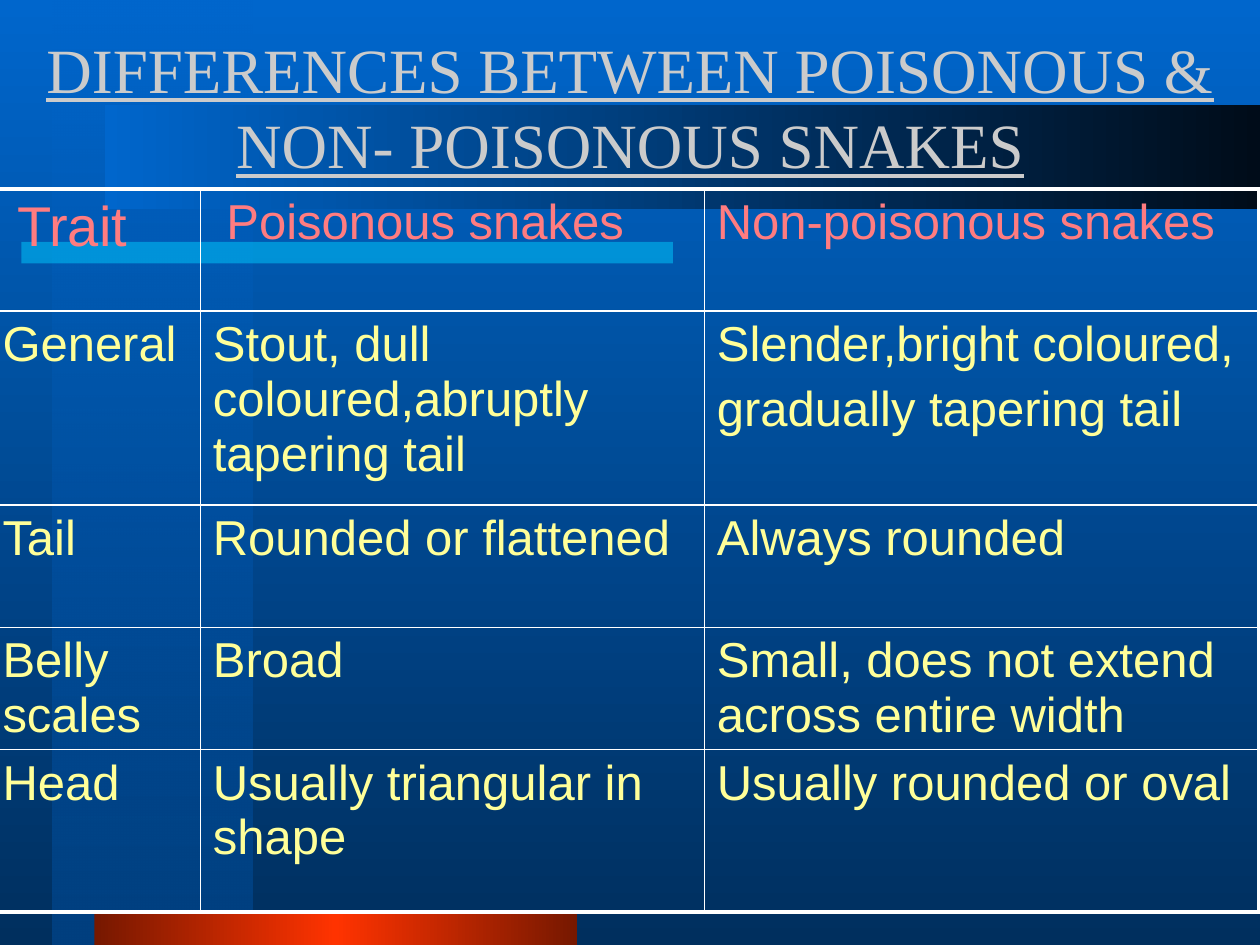
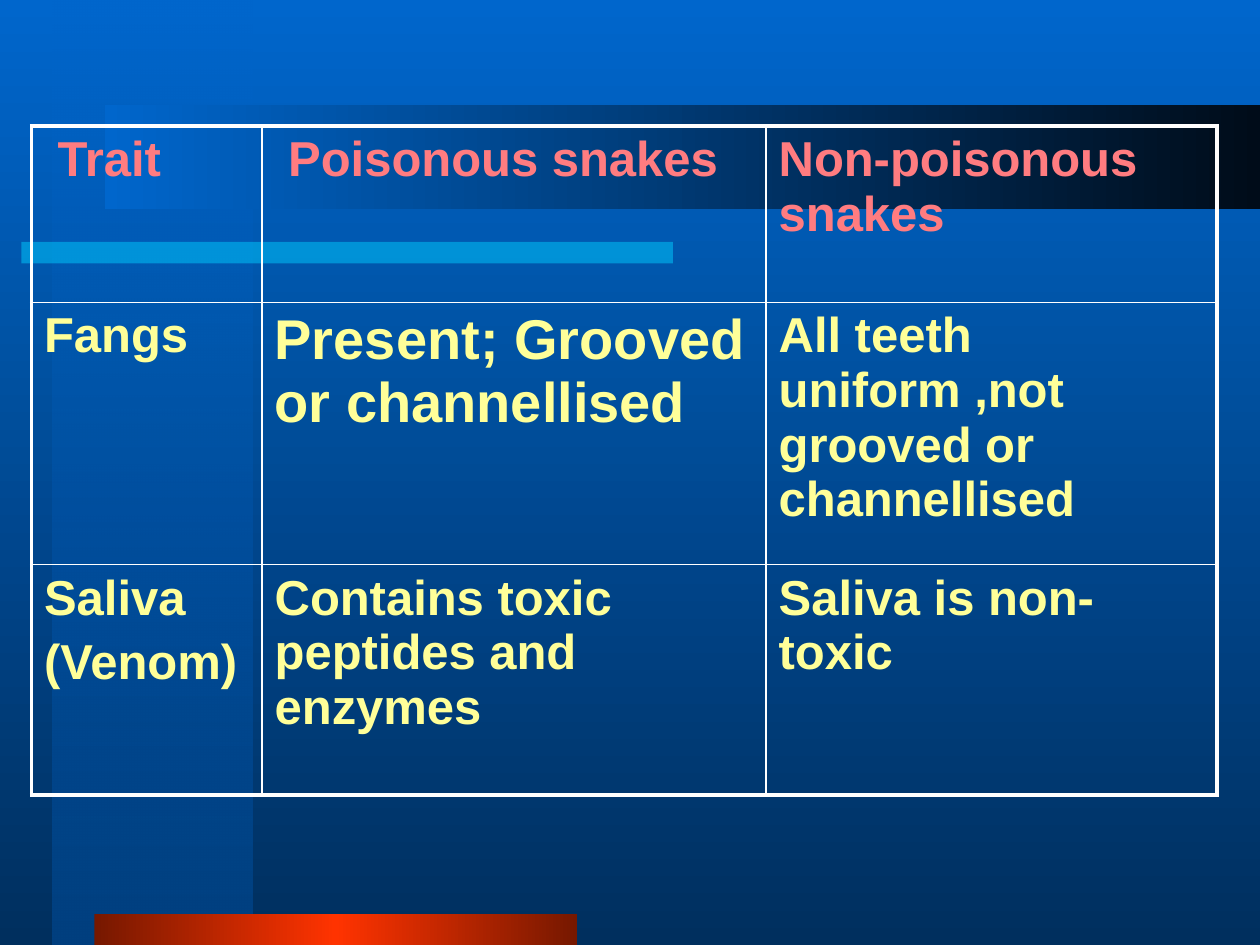
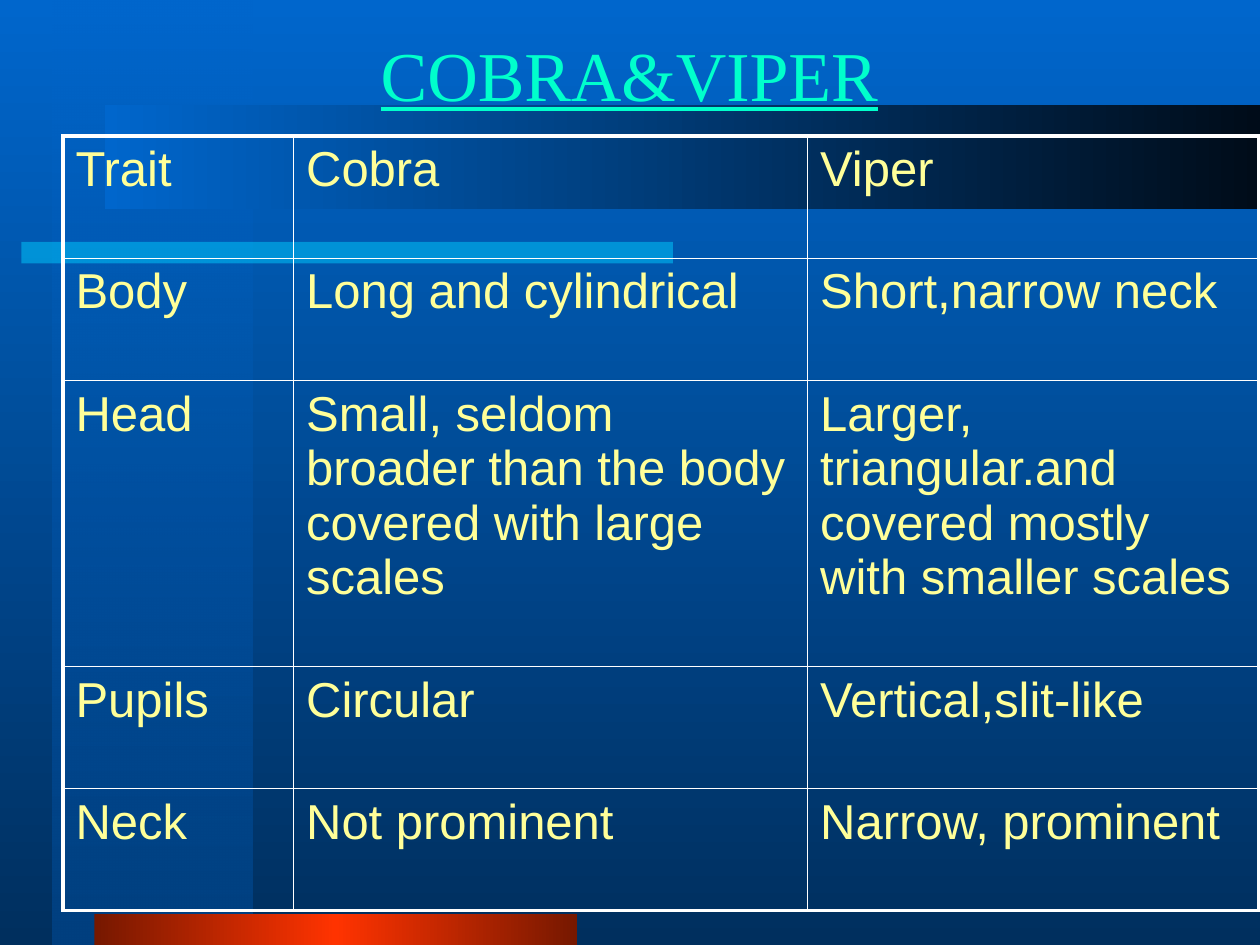
from lxml.etree import SubElement
from pptx import Presentation
from pptx.dml.color import RGBColor
from pptx.enum.shapes import MSO_SHAPE
from pptx.enum.text import MSO_ANCHOR, MSO_AUTO_SIZE, PP_ALIGN
from pptx.oxml.ns import qn
from pptx.util import Inches, Pt

COLORS = {
    "blue": "0066CC", "navy": "002F5E", "column": "004080", "night": "000C19",
    "cyan": "00CCFF", "red": "FF3300", "maroon": "761800",
    "grey": "CBCBCB", "aqua": "00FFCC", "pink": "FF7C80", "yellow": "FFFF99",
    "white": "FFFFFF",
}
TITLE_FONT, BODY_FONT = "Times New Roman", "Arial"
BODY_SIZE, LARGE_SIZE = 28, 32
OUTER_LINE, INNER_LINE = 2.25, 1
TITLE_ONLY, BLANK = 5, 6
ACROSS, DOWN = 0, 270

# Box, gradient angle and stops: position %, colour, opacity %
DECORATIONS = [
    ((0.42, 0, 1.58, 7.5), DOWN, [(0, "blue", 50), (100, "column", 100)]),
    ((0.17, 1.92, 5.17, 0.17), ACROSS, [(0, "cyan", 50), (100, "cyan", 50)]),
    ((0.75, 7.25, 3.83, 0.25), ACROSS,
     [(0, "maroon", 100), (50, "red", 100), (100, "maroon", 100)]),
    ((0.83, 0.83, 9.17, 0.83), ACROSS, [(0, "blue", 100), (100, "night", 100)]),
]

GENERAL_ROWS = [
    [" Trait", " Poisonous snakes", "Non-poisonous snakes"],
    ["General", "Stout, dull coloured,abruptly tapering tail",
     "Slender,bright coloured,\ngradually tapering tail"],
    ["Tail", "Rounded or flattened", "Always rounded"],
    ["Belly scales", "Broad", "Small, does not extend across entire width"],
    ["Head", "Usually triangular in shape", "Usually rounded or oval"],
]
VENOM_ROWS = [
    [" Trait", " Poisonous snakes", "Non-poisonous snakes"],
    ["Fangs", "Present; Grooved or channellised",
     "All teeth uniform ,not grooved or channellised"],
    ["Saliva\n(Venom)", "Contains toxic peptides and enzymes", "Saliva is non-toxic"],
]
COBRA_VIPER_ROWS = [
    ["Trait", "Cobra", "Viper"],
    ["Body", "Long and cylindrical", "Short,narrow neck"],
    ["Head", "Small, seldom broader than the body covered with large scales",
     "Larger, triangular.and covered mostly with smaller scales"],
    ["Pupils", "Circular", "Vertical,slit-like"],
    ["Neck", "Not prominent", "Narrow, prominent"],
]


def color(name):
    return RGBColor.from_string(COLORS[name])


def set_gradient(fill, element, angle, stops):
    """Give the fill, which lives inside element, any number of stops."""
    fill.gradient()
    fill.gradient_angle = angle
    stop_list = element.find(".//" + qn("a:gsLst"))
    for old_stop in list(stop_list):
        stop_list.remove(old_stop)
    for position, name, opacity in stops:
        stop = SubElement(stop_list, qn("a:gs"), pos=str(position * 1000))
        rgb = SubElement(stop, qn("a:srgbClr"), val=COLORS[name])
        if opacity < 100:
            SubElement(rgb, qn("a:alpha"), val=str(opacity * 1000))


def decorate_master(presentation, slide):
    """Draw the shared bands on the slide, then move them to its master."""
    master = presentation.slide_master
    set_gradient(master.background.fill, master.element, DOWN,
                 [(0, "blue", 100), (100, "navy", 100)])
    for index, (box, angle, stops) in enumerate(DECORATIONS):
        shape = slide.shapes.add_shape(MSO_SHAPE.RECTANGLE, *map(Inches, box))
        shape.name = f"Band {index + 1}"
        shape.shadow.inherit = False
        shape.line.fill.background()
        set_gradient(shape.fill, shape.element, angle, stops)
        shape.element.nvSpPr.cNvPr.set("id", str(100 + index))
        master.shapes.element.insert(2 + index, shape.element)


def format_runs(paragraph, font_name, size, color_name, bold=False, underline=False):
    for run in paragraph.runs:
        run.font.name = font_name
        run.font.size = Pt(size)
        run.font.color.rgb = color(color_name)
        run.font.bold = bold
        run.font.underline = underline


def place_title(slide, box, text, size, color_name):
    title = slide.shapes.title
    title.left, title.top, title.width, title.height = map(Inches, box)
    text_frame = title.text_frame
    text_frame.text = text
    text_frame.word_wrap = True
    text_frame.auto_size = MSO_AUTO_SIZE.NONE
    text_frame.vertical_anchor = MSO_ANCHOR.MIDDLE
    paragraph = text_frame.paragraphs[0]
    paragraph.alignment = PP_ALIGN.CENTER
    format_runs(paragraph, TITLE_FONT, size, color_name, underline=True)


def set_borders(cell, outer_edges):
    """Line all four sides, thicker where the cell meets the table's edge."""
    properties = cell._tc.get_or_add_tcPr()
    for side, is_outer in zip("LRTB", outer_edges):
        width = Pt(OUTER_LINE if is_outer else INNER_LINE)
        line = SubElement(properties, qn(f"a:ln{side}"), w=str(width))
        solid = SubElement(line, qn("a:solidFill"))
        SubElement(solid, qn("a:srgbClr"), val=COLORS["white"])


def place_table(slide, left, top, widths, heights, rows,
                header_color="pink", bold=False, large_cell=None):
    frame = slide.shapes.add_table(len(rows), len(widths), Inches(left), Inches(top),
                                   Inches(sum(widths)), Inches(sum(heights)))
    table = frame.table
    table.first_row = table.horz_banding = False
    for column, width in zip(table.columns, widths):
        column.width = Inches(width)
    for row, height in zip(table.rows, heights):
        row.height = Inches(height)
    last_row, last_column = len(rows) - 1, len(widths) - 1
    for r, texts in enumerate(rows):
        for c, text in enumerate(texts):
            cell = table.cell(r, c)
            set_borders(cell, (c == 0, c == last_column, r == 0, r == last_row))
            cell.fill.background()
            cell.text_frame.text = text
            size = LARGE_SIZE if (r, c) == large_cell else BODY_SIZE
            for paragraph in cell.text_frame.paragraphs:
                paragraph.space_before = Pt(size * 0.2)
                format_runs(paragraph, BODY_FONT, size,
                            header_color if r == 0 else "yellow", bold)


def build_general_slide(slide):
    place_title(slide, (0, 0.13, 10, 1.42),
                "DIFFERENCES BETWEEN POISONOUS & NON- POISONOUS SNAKES", 36, "grey")
    place_table(slide, -0.08, 1.5, (1.67, 4, 4.4), (0.97, 1.54, 0.97, 0.97, 1.29),
                GENERAL_ROWS, large_cell=(0, 0))


def build_venom_slide(slide):
    place_table(slide, 0.25, 1, (1.83, 4, 3.58), (1.4, 2.08, 1.83),
                VENOM_ROWS, bold=True, large_cell=(1, 1))


def build_cobra_viper_slide(slide):
    place_title(slide, (0.33, 0.33, 9.33, 0.5), "COBRA&VIPER", 40, "aqua")
    place_table(slide, 0.5, 1.08, (1.83, 4.08, 3.58), (0.97, 0.97, 2.27, 0.97, 0.97),
                COBRA_VIPER_ROWS, header_color="yellow")


def main():
    presentation = Presentation()
    presentation.slide_width, presentation.slide_height = Inches(10), Inches(7.5)
    layouts = presentation.slide_layouts
    general, venom, cobra_viper = (
        presentation.slides.add_slide(layouts[index])
        for index in (TITLE_ONLY, BLANK, TITLE_ONLY))
    decorate_master(presentation, general)
    build_general_slide(general)
    build_venom_slide(venom)
    build_cobra_viper_slide(cobra_viper)
    presentation.save("out.pptx")


if __name__ == "__main__":
    main()
